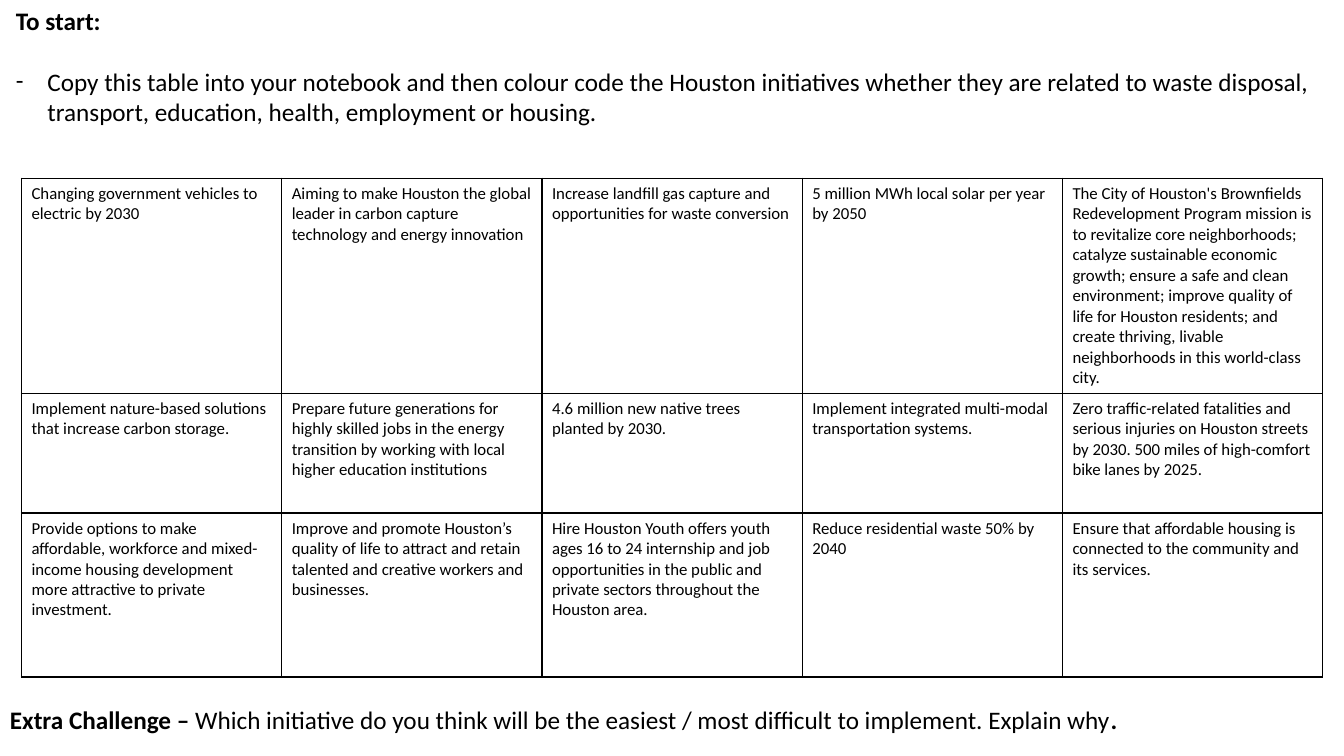
from lxml.etree import SubElement
from pptx import Presentation
from pptx.dml.color import RGBColor
from pptx.enum.text import MSO_AUTO_SIZE
from pptx.oxml import parse_xml
from pptx.oxml.ns import nsdecls, qn
from pptx.util import Pt

COLORS = {"ink": "000000", "border": "000000"}

INITIATIVES = [
    [
        "Changing government vehicles to electric by 2030",
        "Aiming to make Houston the global leader in carbon capture technology and energy innovation",
        "Increase landfill gas capture and opportunities for waste conversion",
        "5 million MWh local solar per year by 2050",
        "The City of Houston's Brownfields Redevelopment Program mission is to revitalize core "
        "neighborhoods; catalyze sustainable economic growth; ensure a safe and clean environment; "
        "improve quality of life for Houston residents; and create thriving, livable neighborhoods "
        "in this world-class city.",
    ],
    [
        "Implement nature-based solutions that increase carbon storage.",
        "Prepare future generations for highly skilled jobs in the energy transition by working "
        "with local higher education institutions",
        "4.6 million new native trees planted by 2030.",
        "Implement integrated multi-modal transportation systems.",
        "Zero traffic-related fatalities and serious injuries on Houston streets by 2030. "
        "500 miles of high-comfort bike lanes by 2025.",
    ],
    [
        "Provide options to make affordable, workforce and mixed-income housing development "
        "more attractive to private investment.",
        "Improve and promote Houston’s quality of life to attract and retain talented and "
        "creative workers and businesses.",
        "Hire Houston Youth offers youth ages 16 to 24 internship and job opportunities in the "
        "public and private sectors throughout the Houston area.",
        "Reduce residential waste 50% by 2040",
        "Ensure that affordable housing is connected to the community and its services.",
    ],
]


class LessonSlide:
    font = "Calibri"
    body_size = 18
    cell_size = 12

    def __init__(self, slide):
        self.slide = slide

    def style(self, paragraph, size):
        paragraph.font.name = self.font
        paragraph.font.size = Pt(size)
        paragraph.font.color.rgb = RGBColor.from_string(COLORS["ink"])

    def text_box(self, left, top, width, height):
        frame = self.slide.shapes.add_textbox(Pt(left), Pt(top), Pt(width), Pt(height)).text_frame
        frame.word_wrap = True
        frame.auto_size = MSO_AUTO_SIZE.SHAPE_TO_FIT_TEXT
        return frame

    def add_parts(self, paragraph, *parts):
        """Fill a paragraph with (text, bold) parts."""
        self.style(paragraph, self.body_size)
        for text, bold in parts:
            run = paragraph.add_run()
            run.text = text
            run.font.bold = bold

    def dash(self, paragraph, indent):
        """Give a paragraph a hanging dash bullet."""
        properties = paragraph._p.get_or_add_pPr()
        properties.set("marL", str(Pt(indent)))
        properties.set("indent", str(-Pt(indent)))
        bullet_font = SubElement(properties, qn("a:buFont"))
        bullet_font.set("typeface", self.font)
        bullet = SubElement(properties, qn("a:buChar"))
        bullet.set("char", "-")
        # The schema wants bullets ahead of the default run properties.
        defaults = properties.find(qn("a:defRPr"))
        if defaults is not None:
            properties.append(defaults)

    def outline(self, cell, width=1):
        properties = cell._tc.get_or_add_tcPr()
        for position, side in enumerate(("lnL", "lnR", "lnT", "lnB")):
            properties.insert(position, parse_xml(
                f'<a:{side} {nsdecls("a")} w="{Pt(width)}"><a:solidFill>'
                f'<a:srgbClr val="{COLORS["border"]}"/></a:solidFill></a:{side}>'))

    def table(self, left, top, column_width, row_heights, rows):
        columns = len(rows[0])
        table = self.slide.shapes.add_table(
            len(rows), columns, Pt(left), Pt(top),
            Pt(column_width * columns), Pt(sum(row_heights))).table
        table.first_row = table.horz_banding = False
        for column in table.columns:
            column.width = Pt(column_width)
        for row, height, texts in zip(table.rows, row_heights, rows):
            row.height = Pt(height)
            for cell, text in zip(row.cells, texts):
                cell.text = text
                self.style(cell.text_frame.paragraphs[0], self.cell_size)
                cell.fill.background()
                self.outline(cell)


def main():
    deck = Presentation()
    deck.slide_width, deck.slide_height = Pt(960), Pt(540)
    lesson = LessonSlide(deck.slides.add_slide(deck.slide_layouts[6]))

    lesson.table(15.3, 127.3, 185.9, [153.5, 85.7, 117.1], INITIATIVES)

    starter = lesson.text_box(4.3, 0, 955.4, 116.6)
    lesson.add_parts(starter.paragraphs[0], ("To start:", True))
    task = starter.add_paragraph()
    task.space_before = Pt(22)
    lesson.add_parts(task, (
        "Copy this table into your notebook and then colour code the Houston initiatives whether "
        "they are related to waste disposal, transport, education, health, employment or housing.",
        False))
    lesson.dash(task, 22.5)

    challenge = lesson.text_box(0, 499.7, 960, 36)
    lesson.add_parts(
        challenge.paragraphs[0],
        ("Extra Challenge – ", True),
        ("Which initiative do you think will be the easiest / most difficult to implement. "
         "Explain why", False),
        (".", True))

    deck.save("out.pptx")


if __name__ == "__main__":
    main()
